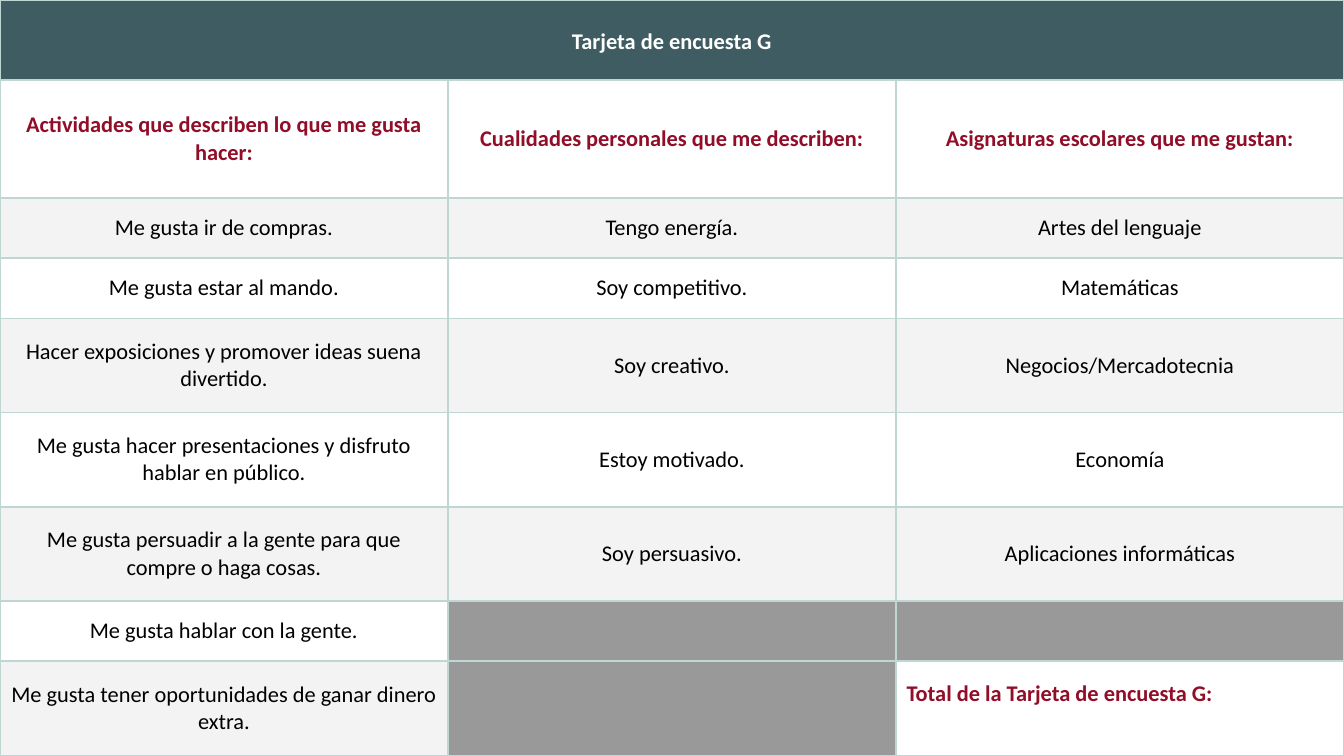
"""Build a one-slide survey card as a three-column table."""
from dataclasses import dataclass

import pptx
import pptx.util
import pptx.dml.color
import pptx.enum.text
import pptx.oxml
import pptx.oxml.ns

Cm = pptx.util.Cm
Pt = pptx.util.Pt
Align = pptx.enum.text.PP_ALIGN


@dataclass(frozen=True)
class Theme:
    font: str = "Calibri"
    size: int = 12
    dark: str = "3E5C61"
    red: str = "910D28"
    black: str = "000000"
    white: str = "FFFFFF"
    band: str = "F3F3F3"
    gray: str = "999999"
    line: str = "BED7D3"


THEME = Theme()
WIDTH, HEIGHT = 25.4, 14.29
PAD = 0.2
TITLE = "Tarjeta de encuesta G"
HEADS = [
    "Actividades que describen lo que me gusta hacer:",
    "Cualidades personales que me describen:",
    "Asignaturas escolares que me gustan:",
]
ITEMS = [
    ("Me gusta ir de compras.", "Tengo energía.", "Artes del lenguaje"),
    ("Me gusta estar al mando.", "Soy competitivo.", "Matemáticas"),
    ("Hacer exposiciones y promover ideas suena divertido.",
     "Soy creativo.", "Negocios/Mercadotecnia"),
    ("Me gusta hacer presentaciones y disfruto hablar en público.",
     "Estoy motivado.", "Economía"),
    ("Me gusta persuadir a la gente para que compre o haga cosas.",
     "Soy persuasivo.", "Aplicaciones informáticas"),
    ("Me gusta hablar con la gente.", "", ""),
    ("Me gusta tener oportunidades de ganar dinero extra.", "", ""),
]
TOTAL = "Total de la Tarjeta de encuesta G:"
SHORT, TALL = 1.14, 1.78
ROWS = [1.51, 2.23, SHORT, SHORT, TALL, TALL, TALL, SHORT, TALL]


def color(code):
    return pptx.dml.color.RGBColor.from_string(code)


def border(cell):
    props = cell._tc.get_or_add_tcPr()
    for side in ("lnL", "lnR", "lnT", "lnB"):
        props.append(pptx.oxml.parse_xml(
            f'<a:{side} {pptx.oxml.ns.nsdecls("a")} w="{Pt(1)}">'
            f'<a:solidFill><a:srgbClr val="{THEME.line}"/></a:solidFill>'
            f'</a:{side}>'))


def paint(cell, fill):
    cell.fill.solid()
    cell.fill.fore_color.rgb = color(fill)


def write(cell, text, ink=THEME.black, bold=False, align=Align.CENTER):
    cell.text = text
    cell.vertical_anchor = pptx.enum.text.MSO_ANCHOR.MIDDLE
    para = cell.text_frame.paragraphs[0]
    para.alignment = align
    font = para.font
    font.name, font.size, font.bold = THEME.font, Pt(THEME.size), bold
    font.color.rgb = color(ink)
    return para


def make_grid(slide):
    frame = slide.shapes.add_table(
        len(ROWS), len(HEADS), 0, 0, Cm(WIDTH), Cm(HEIGHT))
    grid = frame.table
    grid.first_row = grid.horz_banding = False
    for row, size in zip(grid.rows, ROWS):
        row.height = Cm(size)
    for col in grid.columns:
        col.width = Cm(WIDTH / len(HEADS))
    for cell in grid.iter_cells():
        cell.margin_left = cell.margin_right = Cm(PAD)
        cell.margin_top = cell.margin_bottom = Cm(PAD)
        border(cell)
    return grid


def fill_head(grid):
    cell = grid.cell(0, 0)
    cell.merge(grid.cell(0, len(HEADS) - 1))
    paint(cell, THEME.dark)
    para = write(cell, TITLE, THEME.white, True)
    para.line_spacing, para.space_after = 1.15, Pt(6)
    for col, text in enumerate(HEADS):
        cell = grid.cell(1, col)
        paint(cell, THEME.white)
        write(cell, text, THEME.red, True).space_before = Pt(10)


def fill_body(grid):
    for row, texts in enumerate(ITEMS):
        band = THEME.white if row % 2 else THEME.band
        for col, text in enumerate(texts):
            cell = grid.cell(row + 2, col)
            paint(cell, band if text else THEME.gray)
            write(cell, text)


def fill_total(grid):
    cell = grid.cell(len(ROWS) - 1, len(HEADS) - 1)
    paint(cell, THEME.white)
    para = write(cell, TOTAL, THEME.red, True, Align.LEFT)
    para.space_before = Pt(10)
    cell.margin_bottom = Cm(0.76)


def main():
    deck = pptx.Presentation()
    deck.slide_width, deck.slide_height = Cm(WIDTH), Cm(HEIGHT)
    slide = deck.slides.add_slide(deck.slide_layouts.get_by_name("Blank"))
    grid = make_grid(slide)
    fill_head(grid)
    fill_body(grid)
    fill_total(grid)
    deck.save("out.pptx")


if __name__ == "__main__":
    main()
